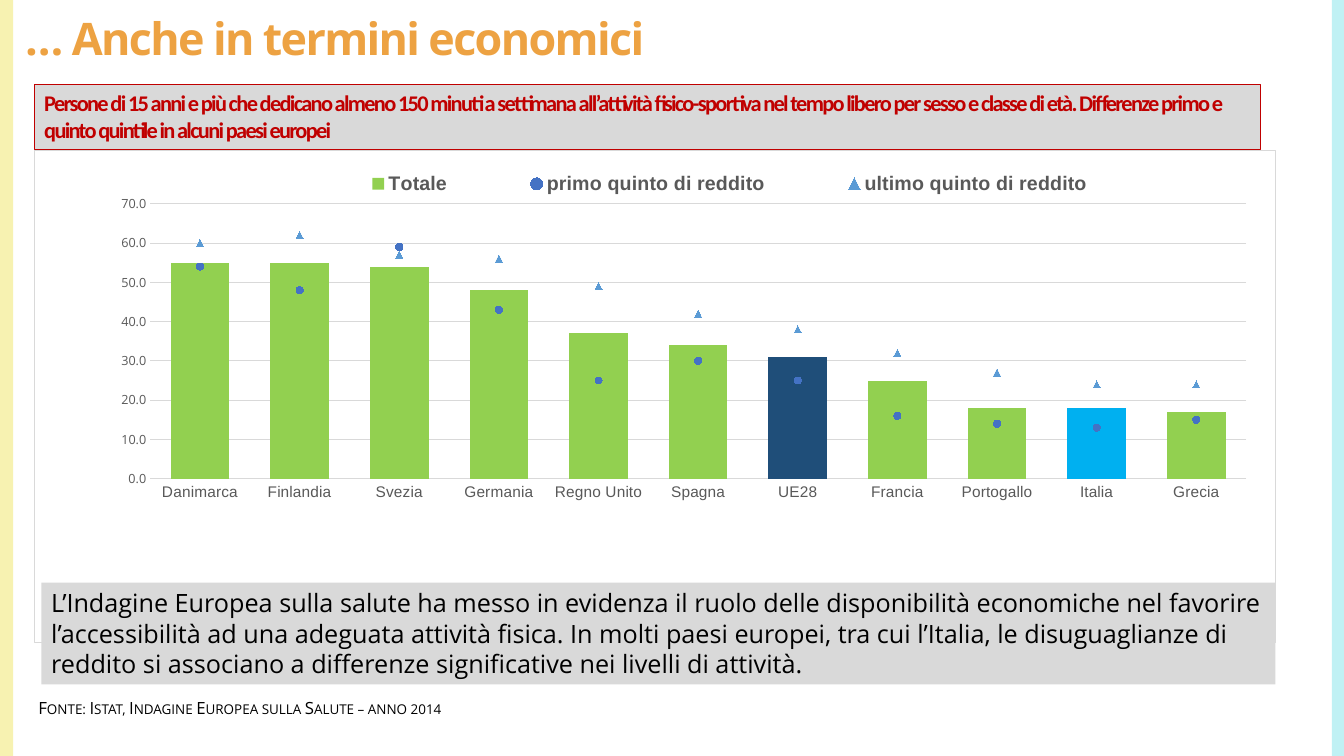
import pptx
import pptx.chart.data
import pptx.dml.color
import pptx.enum.chart
import pptx.enum.shapes
import pptx.enum.text
import pptx.oxml
import pptx.oxml.ns
import pptx.util

Inches = pptx.util.Inches
Pt = pptx.util.Pt
RGB = pptx.dml.color.RGBColor.from_string
qn = pptx.oxml.ns.qn
Anchor = pptx.enum.text.MSO_ANCHOR
Mark = pptx.enum.chart.XL_MARKER_STYLE

COLORS = {
    "cream": "F7F2B1", "aqua": "C0F1F4", "gray": "D9D9D9", "red": "C00000",
    "black": "000000", "white": "FFFFFF", "orange": "EDA242", "label": "595959",
    "green": "92D050", "navy": "1F4E79", "cyan": "00B0F0",
    "blue": "4472C4", "sky": "5B9BD5",
}


def style(font, color, **values):
    for key, value in values.items():
        setattr(font, key, value)
    font.color.rgb = RGB(COLORS[color])


def write(shape, text, color, frame, font, extra):
    body = shape.text_frame
    body.word_wrap = True
    body.auto_size = pptx.enum.text.MSO_AUTO_SIZE.NONE
    for key, value in frame.items():
        setattr(body, key, value)
    para = body.paragraphs[0]
    para.alignment = pptx.enum.text.PP_ALIGN.LEFT
    run = para.add_run()
    run.text = text
    style(run.font, color, **font)
    for key, value in extra.items():
        run._r.get_or_add_rPr().set(key, value)


deck = pptx.Presentation()
deck.slide_width, deck.slide_height = Inches(13.33), Inches(7.5)
slide = deck.slides.add_slide(deck.slide_layouts[5])
shapes = slide.shapes

# Side strips
for left, color in ((0, "cream"), (13.21, "aqua")):
    strip = shapes.add_shape(pptx.enum.shapes.MSO_SHAPE.RECTANGLE,
                             Inches(left), 0, Inches(0.13), Inches(7.5))
    strip.shadow.inherit = False
    strip.fill.solid()
    strip.fill.fore_color.rgb = RGB(COLORS[color])
    strip.line.fill.background()

# Title
title = shapes.title
place = {"left": 0.19, "top": -0.09, "width": 12.95, "height": 0.93}
for key, value in place.items():
    setattr(title, key, Inches(value))
write(title, "… Anche in termini economici", "orange",
      {"vertical_anchor": Anchor.MIDDLE, "margin_left": Inches(0.06),
       "margin_right": Inches(0.06)},
      {"size": Pt(32), "name": "Open Sans", "bold": True}, {"spc": "-120"})

# Chart data
data = pptx.chart.data.CategoryChartData(number_format="#,##0.0")
data.categories = ["Danimarca", "Finlandia", "Svezia", "Germania", "Regno Unito",
                   "Spagna", "UE28", "Francia", "Portogallo", "Italia", "Grecia"]
data.add_series("Totale", [55, 55, 54, 48, 37, 34, 31, 25, 18, 18, 17])
data.add_series("primo quinto di reddito",
                [54, 48, 59, 43, 25, 30, 25, 16, 14, 13, 15])
data.add_series("ultimo quinto di reddito",
                [60, 62, 57, 56, 49, 42, 38, 32, 27, 24, 24])
chart = shapes.add_chart(pptx.enum.chart.XL_CHART_TYPE.COLUMN_CLUSTERED,
                         Inches(0.34), Inches(1.49), Inches(12.32), Inches(4.89),
                         data).chart
chart.has_title = False
style(chart.font, "black", size=Pt(10), name="Open Sans")

# Columns
bars = chart.plots[0]
for key, value in {"gap_width": 70, "overlap": -20, "vary_by_categories": False}.items():
    setattr(bars, key, value)
total = bars.series[0]
fills = [total.format.fill] + [total.points[i].format.fill for i in (6, 9)]
for fill, color in zip(fills, ("green", "navy", "cyan")):
    fill.solid()
    fill.fore_color.rgb = RGB(COLORS[color])

# Income quintiles move to a line plot on the same axes
NS = 'xmlns:c="http://schemas.openxmlformats.org/drawingml/2006/chart"'
group = pptx.oxml.parse_xml(
    f'<c:lineChart {NS}><c:grouping val="standard"/><c:varyColors val="0"/>'
    '<c:marker val="1"/></c:lineChart>')
column = chart._chartSpace.chart.plotArea.find(qn("c:barChart"))
for item in column.findall(qn("c:ser"))[1:]:
    for flag in item.findall(qn("c:invertIfNegative")):
        item.remove(flag)
    group.insert(len(group) - 1, item)
for axis in column.findall(qn("c:axId")):
    group.append(pptx.oxml.parse_xml(f'<c:axId {NS} val="{axis.get("val")}"/>'))
column.addnext(group)

looks = ((Mark.CIRCLE, "blue"), (Mark.TRIANGLE, "sky"))
for series, (mark, color) in zip(chart.plots[1].series, looks):
    series.smooth = False
    series.format.line.fill.background()
    series.marker.style = mark
    series.marker.size = 5
    paint = series.marker.format
    paint.fill.solid()
    paint.fill.fore_color.rgb = RGB(COLORS[color])
    paint.line.color.rgb = RGB(COLORS[color])

# Axes
cats, vals = chart.category_axis, chart.value_axis
for axis, size, name in ((cats, 11, "Arial"), (vals, 9, "Open Sans")):
    axis.major_tick_mark = axis.minor_tick_mark = pptx.enum.chart.XL_TICK_MARK.NONE
    style(axis.tick_labels.font, "label", size=Pt(size), name=name)
scale = {"minimum_scale": 0, "maximum_scale": 70, "major_unit": 10,
         "has_major_gridlines": True}
for key, value in scale.items():
    setattr(vals, key, value)
vals.tick_labels.number_format = "#,##0.0"
vals.tick_labels.number_format_is_linked = False
vals.format.line.fill.background()
for line in (cats.format.line, vals.major_gridlines.format.line):
    line.color.rgb = RGB(COLORS["gray"])
    line.width = Pt(0.75)

# Legend
chart.has_legend = True
legend = chart.legend
legend.position = pptx.enum.chart.XL_LEGEND_POSITION.BOTTOM
legend.include_in_layout = False
style(legend.font, "label", size=Pt(14), name="Arial", bold=True)

# Plot and legend places, then the chart frame
plot = chart._chartSpace.chart.plotArea
spots = ((plot, '<c:layoutTarget val="inner"/>', (0.093, 0.108, 0.883, 0.559)),
         (legend._element, "", (0.21, 0.035, 0.7, 0.065)))
for owner, target, box in spots:
    for old in owner.findall(qn("c:layout")):
        owner.remove(old)
    modes = "".join(f'<c:{k}Mode val="edge"/>' for k in "xy")
    sizes = "".join(f'<c:{k} val="{v}"/>' for k, v in zip("xywh", box))
    layout = pptx.oxml.parse_xml(
        f"<c:layout {NS}><c:manualLayout>{target}{modes}{sizes}"
        "</c:manualLayout></c:layout>")
    owner.insert(0 if owner is plot else 1, layout)
frame = pptx.oxml.parse_xml(
    f'<c:spPr {NS} xmlns:a="http://schemas.openxmlformats.org/drawingml/2006/main">'
    f'<a:solidFill><a:srgbClr val="{COLORS["white"]}"/></a:solidFill>'
    f'<a:ln w="9525"><a:solidFill><a:srgbClr val="{COLORS["gray"]}"/></a:solidFill>'
    '</a:ln></c:spPr>')
chart._chartSpace.chart.addnext(frame)

# Gray text panels
panels = (
    ((0.34, 0.84, 12.16, 0.64), "red", "red",
     {"size": Pt(16), "name": "Calibri", "bold": True}, {"spc": "-120"},
     "Persone di 15 anni e più che dedicano almeno 150 minuti a settimana "
     "all’attività fisico-sportiva nel tempo libero per sesso e classe di età. "
     "Differenze primo e quinto quintile in alcuni paesi europei"),
    ((0.41, 5.78, 12.24, 1.01), None, "black",
     {"size": Pt(18), "name": "Open Sans"}, {},
     "L’Indagine Europea sulla salute ha messo in evidenza il ruolo delle "
     "disponibilità economiche nel favorire l’accessibilità ad una adeguata "
     "attività fisica. In molti paesi europei, tra cui l’Italia, le disuguaglianze "
     "di reddito si associano a differenze significative nei livelli di attività."),
)
for box, edge, color, font, extra, text in panels:
    panel = shapes.add_shape(pptx.enum.shapes.MSO_SHAPE.RECTANGLE, *map(Inches, box))
    panel.shadow.inherit = False
    panel.fill.solid()
    panel.fill.fore_color.rgb = RGB(COLORS["gray"])
    if edge:
        panel.line.color.rgb = RGB(COLORS[edge])
        panel.line.width = Pt(0.75)
    else:
        panel.line.fill.background()
    write(panel, text, color, {"vertical_anchor": Anchor.TOP}, font, extra)

# Source note
note = shapes.add_textbox(Inches(0.34), Inches(6.87), Inches(6.67), Inches(0.3))
write(note, "Fonte: Istat, Indagine Europea sulla Salute – anno 2014", "black",
      {"margin_left": Inches(0.04), "margin_right": 0},
      {"size": Pt(12), "name": "Open Sans"}, {"cap": "small"})

deck.save("out.pptx")
